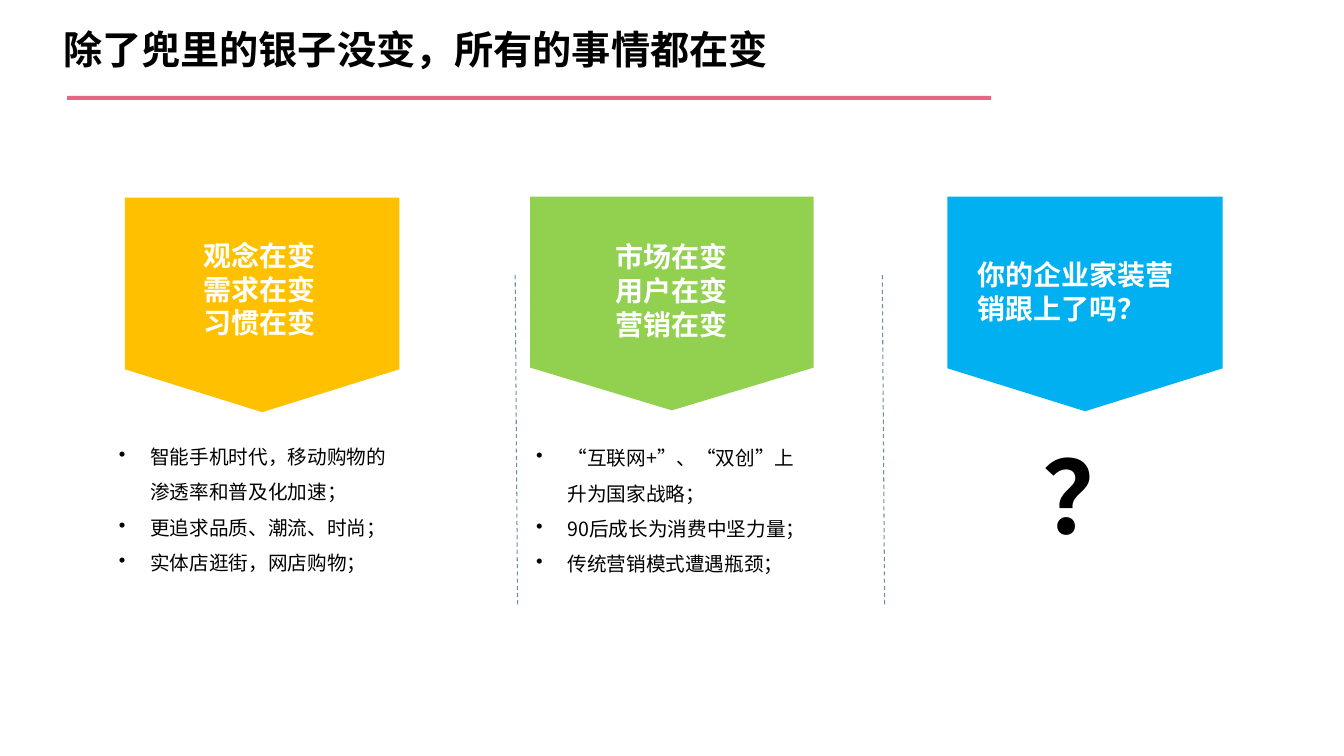
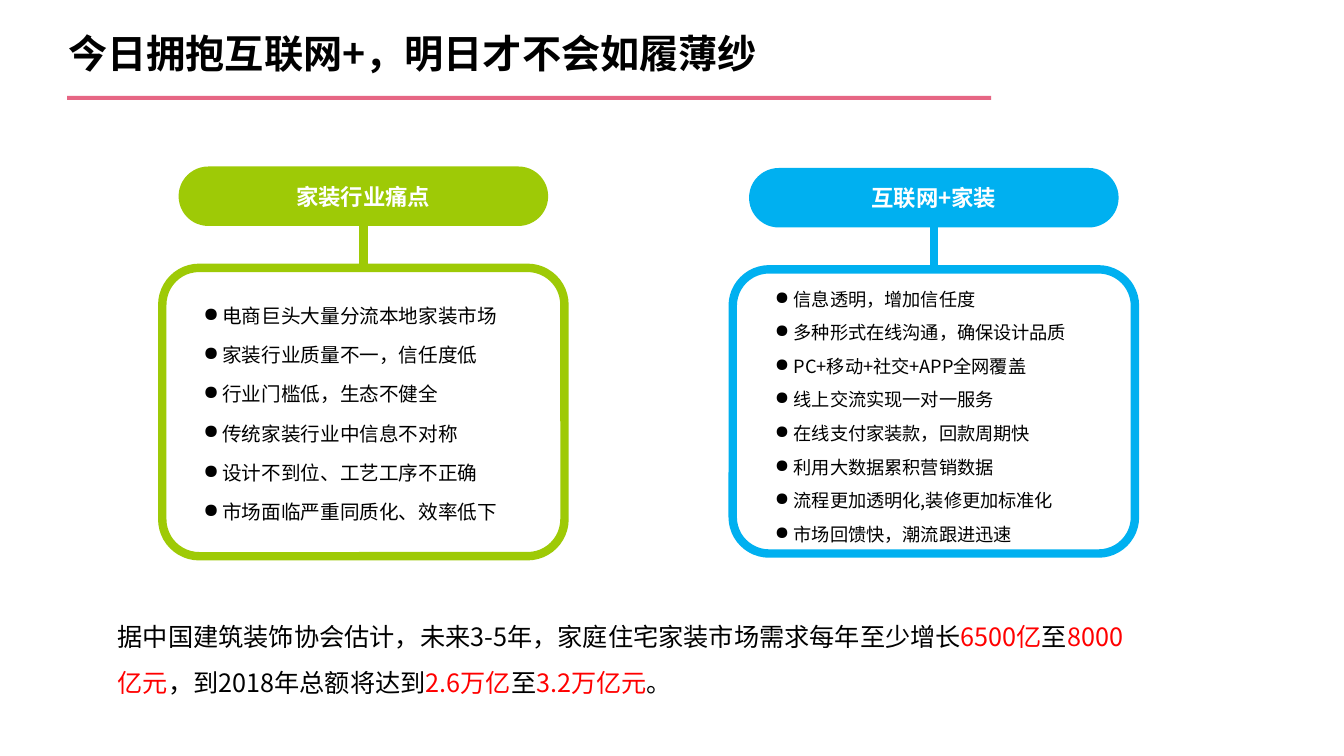
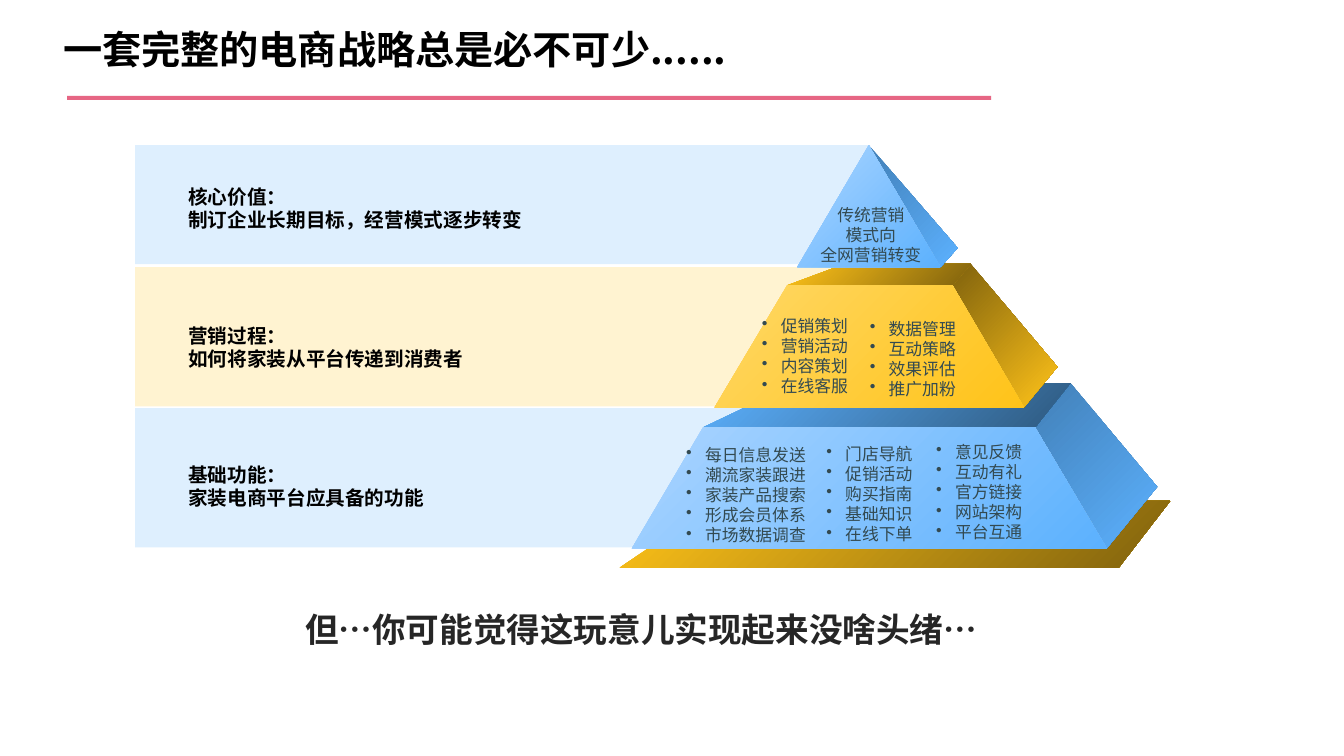
from lxml.etree import SubElement
from pptx import Presentation
from pptx.dml.color import RGBColor
from pptx.enum.dml import MSO_LINE
from pptx.enum.shapes import MSO_CONNECTOR, MSO_SHAPE
from pptx.enum.text import MSO_ANCHOR, PP_ALIGN
from pptx.oxml.ns import qn
from pptx.util import Pt

FONT = "Noto Sans CJK SC"
BLACK = RGBColor(0x00, 0x00, 0x00)
WHITE = RGBColor(0xFF, 0xFF, 0xFF)
CHARCOAL = RGBColor(0x26, 0x26, 0x26)
SLATE = RGBColor(0x33, 0x4A, 0x51)
TEAL = RGBColor(0x68, 0x92, 0xA0)
PINK = RGBColor(0xE6, 0x66, 0x84)
RED = RGBColor(0xFF, 0x00, 0x00)
ORANGE = RGBColor(0xFF, 0xC0, 0x00)
GREEN = RGBColor(0x92, 0xD0, 0x50)
LIME = RGBColor(0x9E, 0xCA, 0x06)
CYAN = RGBColor(0x00, 0xB0, 0xF0)
SKY = RGBColor(0x5C, 0xB1, 0xFE)
GOLD = RGBColor(0xFF, 0xC3, 0x19)
DARK_GOLD = RGBColor(0x80, 0x62, 0x0D)

# Gradient pairs for the faces of a pyramid tier
BLUE_FACES = {
    "front": (RGBColor(0xAB, 0xD5, 0xFF), SKY),
    "side": (RGBColor(0x42, 0x80, 0xB8), SKY),
    "top": (SKY, RGBColor(0x2E, 0x59, 0x7F)),
}
GOLD_FACES = {
    "front": (RGBColor(0xFF, 0xD8, 0x66), GOLD),
    "side": (DARK_GOLD, GOLD),
    "top": (GOLD, DARK_GOLD),
}


class Deck:
    def __init__(self):
        self.presentation = Presentation()
        self.presentation.slide_width = Pt(960)
        self.presentation.slide_height = Pt(540)
        self.slide = None

    def new_slide(self, title, left=38, top=18):
        self.slide = self.presentation.slides.add_slide(self.presentation.slide_layouts[6])
        self.text(left, top, 756, 49, [title], size=28, bold=True, spacing=0.9)
        self.shape(MSO_SHAPE.RECTANGLE, 48, 68.5, 660, 2.9, fill=PINK)

    def shape(self, kind, left, top, width, height, fill, line=None,
              line_width=6, adjustment=None, opacity=None):
        shape = self.slide.shapes.add_shape(kind, Pt(left), Pt(top), Pt(width), Pt(height))
        shape.shadow.inherit = False
        shape.fill.solid()
        shape.fill.fore_color.rgb = fill
        if opacity is not None:
            color = shape.element.spPr.find(".//" + qn("a:srgbClr"))
            SubElement(color, qn("a:alpha"), val=str(opacity * 1000))
        if line is None:
            shape.line.fill.background()
        else:
            shape.line.color.rgb = line
            shape.line.width = Pt(line_width)
        if adjustment is not None:
            shape.adjustments[0] = adjustment
        return shape

    def line(self, start, end, color, width, dash=None):
        connector = self.slide.shapes.add_connector(
            MSO_CONNECTOR.STRAIGHT, *(Pt(value) for value in (*start, *end)))
        connector.line.color.rgb = color
        connector.line.width = Pt(width)
        if dash is not None:
            connector.line.dash_style = dash
        SubElement(connector.element.spPr, qn("a:effectLst"))

    def face(self, points, colors):
        corners = [(Pt(x), Pt(y)) for x, y in dict.fromkeys(points)]
        builder = self.slide.shapes.build_freeform(*corners[0], scale=1.0)
        builder.add_line_segments(corners[1:], close=True)
        shape = builder.convert_to_shape()
        shape.shadow.inherit = False
        shape.line.fill.background()
        shape.fill.gradient()
        shape.fill.gradient_angle = 315
        for stop, color in zip(shape.fill.gradient_stops, colors):
            stop.color.rgb = color

    def tier(self, faces, bottom_left, bottom_right, top_right, top_left,
             back_bottom, back_right, back_left=None):
        self.face([top_right, bottom_right, back_bottom, back_right], faces["side"])
        if back_left is not None:
            self.face([top_left, top_right, back_right, back_left], faces["top"])
        self.face([bottom_left, bottom_right, top_right, top_left], faces["front"])

    def text(self, left, top, width, height, paragraphs, **style):
        box = self.slide.shapes.add_textbox(Pt(left), Pt(top), Pt(width), Pt(height))
        self.add_paragraphs(box.text_frame, paragraphs, **style)

    def add_paragraphs(self, frame, paragraphs, size, color=BLACK, bold=False,
                       align=PP_ALIGN.LEFT, spacing=None, bullet=None, indent=13.5):
        """A paragraph is a string or a list of (string, colour) runs."""
        frame.word_wrap = True
        for index, content in enumerate(paragraphs):
            paragraph = frame.add_paragraph() if index else frame.paragraphs[0]
            paragraph.alignment = align
            if spacing is not None:
                paragraph.line_spacing = spacing
            if bullet:
                properties = paragraph._p.get_or_add_pPr()
                properties.set("marL", str(Pt(indent)))
                properties.set("indent", str(-Pt(indent)))
                SubElement(properties, qn("a:buChar"), char=bullet)
            runs = [(content, color)] if isinstance(content, str) else content
            for words, run_color in runs:
                run = paragraph.add_run()
                run.text = words
                run.font.size = Pt(size)
                run.font.bold = bold
                run.font.color.rgb = run_color
                run.font.name = FONT
                SubElement(run._r.get_or_add_rPr(), qn("a:ea"), typeface=FONT)

    def panel(self, left, top, height, color, heading, items, items_box, size, spacing):
        pill_height, box_width, box_top = 42.5, 287.3, top + 72.4
        center = left + box_width / 2
        pill = self.shape(MSO_SHAPE.ROUNDED_RECTANGLE, center - 132, top, 264, pill_height,
                          fill=color, adjustment=0.5)
        pill.text_frame.vertical_anchor = MSO_ANCHOR.MIDDLE
        self.add_paragraphs(pill.text_frame, [heading], size=16, color=WHITE, bold=True,
                            align=PP_ALIGN.CENTER)
        self.shape(MSO_SHAPE.ROUNDED_RECTANGLE, left, box_top, box_width, height,
                   fill=WHITE, line=color, adjustment=0.128)
        self.line((center, top + pill_height), (center, box_top), color, 6)
        self.text(*items_box, items, size=size, spacing=Pt(spacing), bullet="●")


def build_changes(deck):
    deck.new_slide("除了兜里的银子没变，所有的事情都在变")

    # Banners and their headings
    banners = [
        ((89.3, 141.2, 196, 153.2), ORANGE, (138.2, 167, 130, 81),
         ["观念在变", "需求在变", "习惯在变"]),
        ((378.7, 140.5, 202.5, 152.6), GREEN, (432.7, 167.8, 130, 81),
         ["市场在变", "用户在变", "营销在变"]),
        ((676.8, 140.5, 196.6, 153.2), CYAN, (691.2, 180.7, 174.2, 57),
         ["你的企业家装营销跟上了吗？"]),
    ]
    for banner_box, color, heading_box, heading in banners:
        deck.shape(MSO_SHAPE.FLOWCHART_OFFPAGE_CONNECTOR, *banner_box, fill=color)
        deck.text(*heading_box, heading, size=20, color=WHITE, bold=True)

    # Explanations
    explanations = [
        ((77.8, 306, 218.2, 150),
         ["智能手机时代，移动购物的渗透率和普及化加速；", "更追求品质、潮流、时尚；",
          "实体店逛街，网店购物；"]),
        ((375.8, 306.9, 205.2, 108),
         ["“互联网+”、“双创”上升为国家战略；", "90后成长为消费中坚力量；",
          "传统营销模式遭遇瓶颈；"]),
    ]
    for box, items in explanations:
        deck.text(*box, items, size=14, spacing=1.5, bullet="•", indent=22.5)
    deck.text(737.3, 306, 127.4, 99.4, ["？"], size=72, bold=True)

    # Dividers
    for x in (368, 630.2):
        deck.line((x, 196.6), (x + 1.7, 432), TEAL, 0.75, MSO_LINE.DASH)


def build_internet(deck):
    deck.new_slide("今日拥抱互联网+，明日才不会如履薄纱", left=41.8, top=20.9)

    # Panels
    deck.panel(115.9, 118.9, 206, LIME, "家装行业痛点",
               ["电商巨头大量分流本地家装市场", "家装行业质量不一，信任度低",
                "行业门槛低，生态不健全", "传统家装行业中信息不对称",
                "设计不到位、工艺工序不正确", "市场面临严重同质化、效率低下"],
               (138.2, 202.3, 239.8, 205), size=14, spacing=28)
    deck.panel(523.4, 120, 203, CYAN, "互联网+家装",
               ["信息透明，增加信任度", "多种形式在线沟通，确保设计品质",
                "PC+移动+社交+APP全网覆盖", "线上交流实现一对一服务",
                "在线支付家装款，回款周期快", "利用大数据累积营销数据",
                "流程更加透明化,装修更加标准化", "市场回馈快，潮流跟进迅速"],
               (546.5, 193.7, 278.6, 201), size=13, spacing=24)

    # Market estimate
    estimate = [
        ("据中国建筑装饰协会估计，未来3-5年，家庭住宅家装市场需求每年至少增长", BLACK),
        ("6500亿", RED), ("至", BLACK), ("8000亿元", RED),
        ("，到2018年总额将达到", BLACK),
        ("2.6万亿", RED), ("至", BLACK), ("3.2万亿元", RED), ("。", BLACK),
    ]
    deck.text(77, 429.8, 747.4, 72.7, [estimate], size=18, spacing=1.5)


def build_strategy(deck):
    deck.new_slide("一套完整的电商战略总是必不可少......")

    # Bands behind the tiers
    bands = [
        (103.7, 525, 85, SKY, 128.2, ["核心价值：", "制订企业长期目标，经营模式逐步转变"]),
        (190.8, 535, 99.4, GOLD, 227.5, ["营销过程：", "如何将家装从平台传递到消费者"]),
        (291.6, 477.4, 99.4, SKY, 326.9, ["基础功能：", "家装电商平台应具备的功能"]),
    ]
    for top, width, height, color, text_top, lines in bands:
        deck.shape(MSO_SHAPE.RECTANGLE, 96.5, top, width, height, fill=color, opacity=20)
        deck.text(127.4, text_top, 273, 41.8, lines, size=14, bold=True)

    # Pyramid, from the base up
    deck.face([(442.8, 405.4), (799.2, 405.4), (835.9, 357.8), (513.4, 357.8)],
              GOLD_FACES["top"])
    deck.tier(BLUE_FACES, (451.4, 391.7), (790.6, 391.7), (739.4, 305.3), (502.2, 305.3),
              (826.6, 347.8), (764.6, 273.6), (568.8, 273.6))
    deck.tier(GOLD_FACES, (510.5, 290.9), (731.5, 290.9), (680.4, 203.8), (562.3, 203.8),
              (755.3, 262.1), (693.4, 188.6), (603.4, 188.6))
    apex = (620.6, 103.7)
    deck.tier(BLUE_FACES, (569.5, 190.8), (671.8, 190.8), apex, apex, (684, 177.1), apex)

    # Words on the tiers
    deck.text(576.7, 142.6, 90.7, 51, ["传统营销", "模式向", "全网营销转变"],
              size=12, color=SLATE, align=PP_ALIGN.CENTER)
    lists = [
        (537.1, 221.8, 85, ["促销策划", "营销活动", "内容策划", "在线客服"]),
        (614.2, 223.9, 85, ["数据管理", "互动策略", "效果评估", "推广加粉"]),
        (483.1, 313.9, 115.2,
         ["每日信息发送", "潮流家装跟进", "家装产品搜索", "形成会员体系", "市场数据调查"]),
        (583.2, 313.2, 89.3, ["门店导航", "促销活动", "购买指南", "基础知识", "在线下单"]),
        (661.7, 311.8, 89.3, ["意见反馈", "互动有礼", "官方链接", "网站架构", "平台互通"]),
    ]
    for left, top, width, items in lists:
        deck.text(left, top, width, 14.4 * len(items) + 8, items, size=12, color=SLATE,
                  bullet="•")

    # Closing line
    deck.text(89.3, 431.3, 737.3, 36, ["但…你可能觉得这玩意儿实现起来没啥头绪…"],
              size=24, color=CHARCOAL, bold=True, align=PP_ALIGN.CENTER)


def main():
    deck = Deck()
    build_changes(deck)
    build_internet(deck)
    build_strategy(deck)
    deck.presentation.save("out.pptx")


if __name__ == "__main__":
    main()
